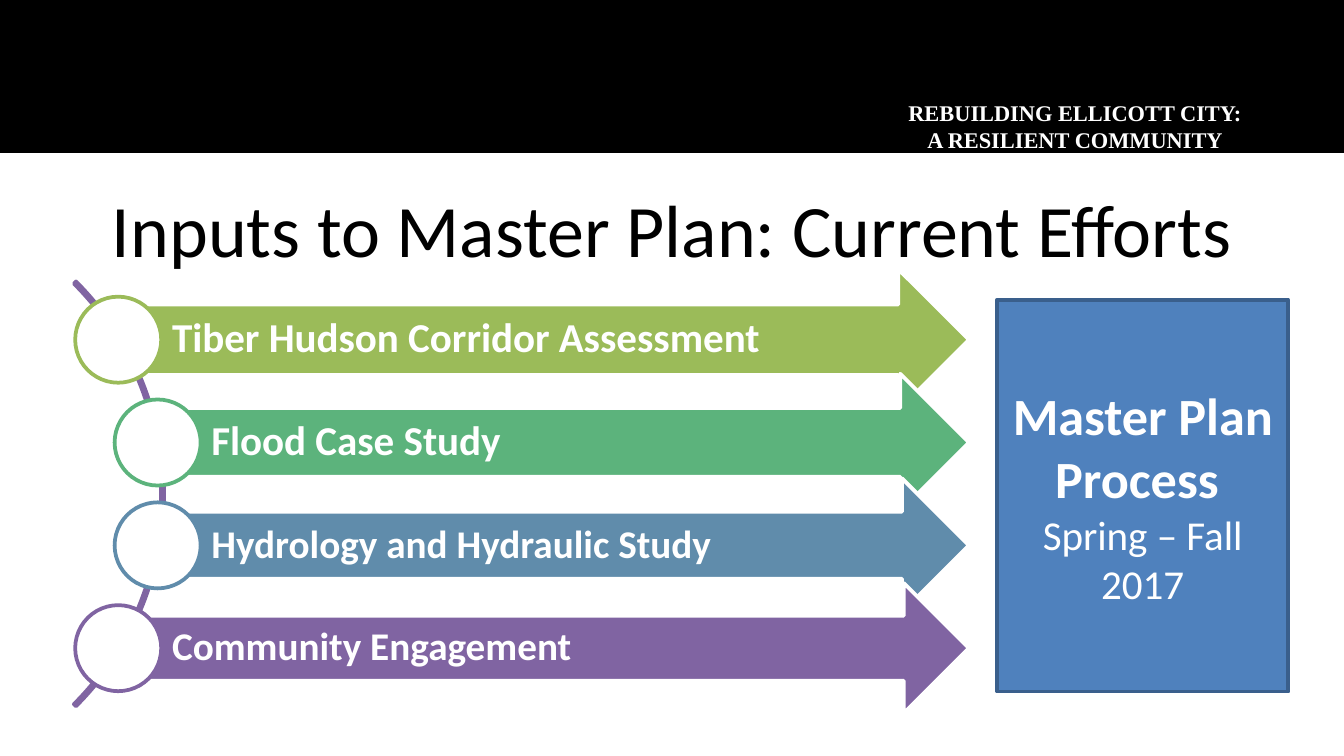
"""Draw the slide on current efforts that feed the master plan."""
from dataclasses import dataclass
from typing import Any, Optional

from pptx import Presentation
from pptx.dml.color import RGBColor as RGB
from pptx.enum.shapes import MSO_SHAPE as Kind
from pptx.enum.text import MSO_ANCHOR as Anchor, PP_ALIGN as Align
from pptx.util import Inches, Pt


@dataclass(frozen=True)
class Theme:
    black: str = "000000"
    white: str = "FFFFFF"
    blue: str = "4F81BD"
    navy: str = "3A5F8C"
    green: str = "9BBB59"
    mint: str = "5CB37C"
    steel: str = "608CAB"
    plum: str = "8064A2"
    sans: str = "Calibri"
    serif: str = "Times New Roman"
    small: float = 12
    label: float = 21
    body: float = 22
    head: float = 28
    title: float = 39.6
    edge: float = 2


LOOK = Theme()


@dataclass(frozen=True)
class Box:
    col: float
    row: float
    wide: float
    high: float


@dataclass(frozen=True)
class Line:
    text: str
    size: float
    bold: bool = False
    color: str = LOOK.white
    font: str = LOOK.sans


@dataclass(frozen=True)
class Effort:
    name: str
    color: str
    size: float
    left: float


CELL = Inches(0.1)
COLS, ROWS = 100, 56.25
FIRST, PITCH = 25.28, 7.65
RING, TIP = 6.4, 72.1
TALL, SHRINK = 10.5, 0.27
OUTER, INNER = 5.6, 8.53
EFFORTS = [
    Effort("Tiber Hudson Corridor Assessment", LOOK.green, LOOK.body, OUTER),
    Effort("Flood Case Study", LOOK.mint, LOOK.body, INNER),
    Effort("Hydrology and Hydraulic Study", LOOK.steel, LOOK.label, INNER),
    Effort("Community Engagement", LOOK.plum, LOOK.label, OUTER),
]


def cells(box: Box) -> list[int]:
    """Turn a box of grid cells into slide lengths."""
    return [round(n * CELL) for n in (box.col, box.row, box.wide, box.high)]


def style(item: Any, looks: dict[str, Any]) -> None:
    """Set each format value on an item."""
    for key, value in looks.items():
        setattr(item, key, value)


def shape(slide: Any, kind: Kind, box: Box, fill: Optional[str], edge: str) -> Any:
    """Draw a flat preset shape."""
    item = slide.shapes.add_shape(kind, *cells(box))
    item.shadow.inherit = False
    if fill:
        item.fill.solid()
        item.fill.fore_color.rgb = RGB.from_string(fill)
    else:
        item.fill.background()
    item.line.color.rgb = RGB.from_string(edge)
    item.line.width = Pt(LOOK.edge)
    return item


def write(item: Any, lines: list[Line], frame: dict[str, Any], para: dict[str, Any]) -> None:
    """Fill a shape with styled lines of text."""
    body = item.text_frame
    style(body, {"word_wrap": True, **frame})
    for i, line in enumerate(lines):
        part = body.add_paragraph() if i else body.paragraphs[0]
        style(part, para)
        run = part.add_run()
        run.text = line.text
        style(run.font, {"name": line.font, "size": Pt(line.size), "bold": line.bold})
        run.font.color.rgb = RGB.from_string(line.color)


def banner(slide: Any) -> None:
    """Draw the top band, its motto and the title."""
    shape(slide, Kind.RECTANGLE, Box(-0.3, 0, COLS + 0.3, ROWS / 5), LOOK.black, LOOK.black)
    motto = slide.shapes.add_textbox(*cells(Box(65, 6.9, 30, 5)))
    lines = [Line(text, LOOK.small, True, font=LOOK.serif)
             for text in ("REBUILDING ELLICOTT CITY:", "A RESILIENT COMMUNITY")]
    write(motto, lines, {}, {"alignment": Align.CENTER})
    title = slide.shapes.add_textbox(*cells(Box(5, 12.3, COLS - 10, 9.4)))
    write(title, [Line("Inputs to Master Plan: Current Efforts", LOOK.title, color=LOOK.black)],
          {"vertical_anchor": Anchor.MIDDLE}, {"alignment": Align.CENTER})


def arc(slide: Any) -> None:
    """Draw the thin curve that links the rings."""
    item = shape(slide, Kind.BLOCK_ARC, Box(-32.5, 14.4, 44.7, 44.7), None, LOOK.plum)
    for i, value in enumerate((189, 27, 0.005)):
        item.adjustments[i] = value


def effort(slide: Any, rank: int, item: Effort) -> None:
    """Draw one arrow with its label and ring."""
    mid = FIRST + rank * PITCH
    high = TALL - rank * SHRINK
    left = item.left + RING / 2
    wide = TIP - left
    shape(slide, Kind.RIGHT_ARROW, Box(left, mid - high / 2, wide, high), item.color, LOOK.white)
    label = slide.shapes.add_textbox(*cells(Box(left, mid - high / 4, wide - high / 4, high / 2)))
    pad = Inches(0.06)
    frame = {"vertical_anchor": Anchor.MIDDLE, "margin_left": Inches(0.4),
             "margin_right": pad, "margin_top": pad, "margin_bottom": pad}
    write(label, [Line(item.name, item.size, True)], frame, {"line_spacing": 0.9})
    shape(slide, Kind.OVAL, Box(item.left, mid - RING / 2, RING, RING), LOOK.white, item.color)


def plan(slide: Any) -> None:
    """Draw the panel that the arrows lead to."""
    panel = shape(slide, Kind.RECTANGLE, Box(74.2, 22.3, 21.66, 29.16), LOOK.blue, LOOK.navy)
    lines = [Line("Master Plan Process ", LOOK.head, True), Line("Spring – Fall 2017", LOOK.body)]
    write(panel, lines, {"vertical_anchor": Anchor.MIDDLE}, {"alignment": Align.CENTER})


def main() -> None:
    """Build and save the slide."""
    deck = Presentation()
    style(deck, {"slide_width": COLS * CELL, "slide_height": round(ROWS * CELL)})
    slide = deck.slides.add_slide(deck.slide_layouts[6])
    banner(slide)
    arc(slide)
    for rank, item in enumerate(EFFORTS):
        effort(slide, rank, item)
    plan(slide)
    deck.save("out.pptx")


if __name__ == "__main__":
    main()
